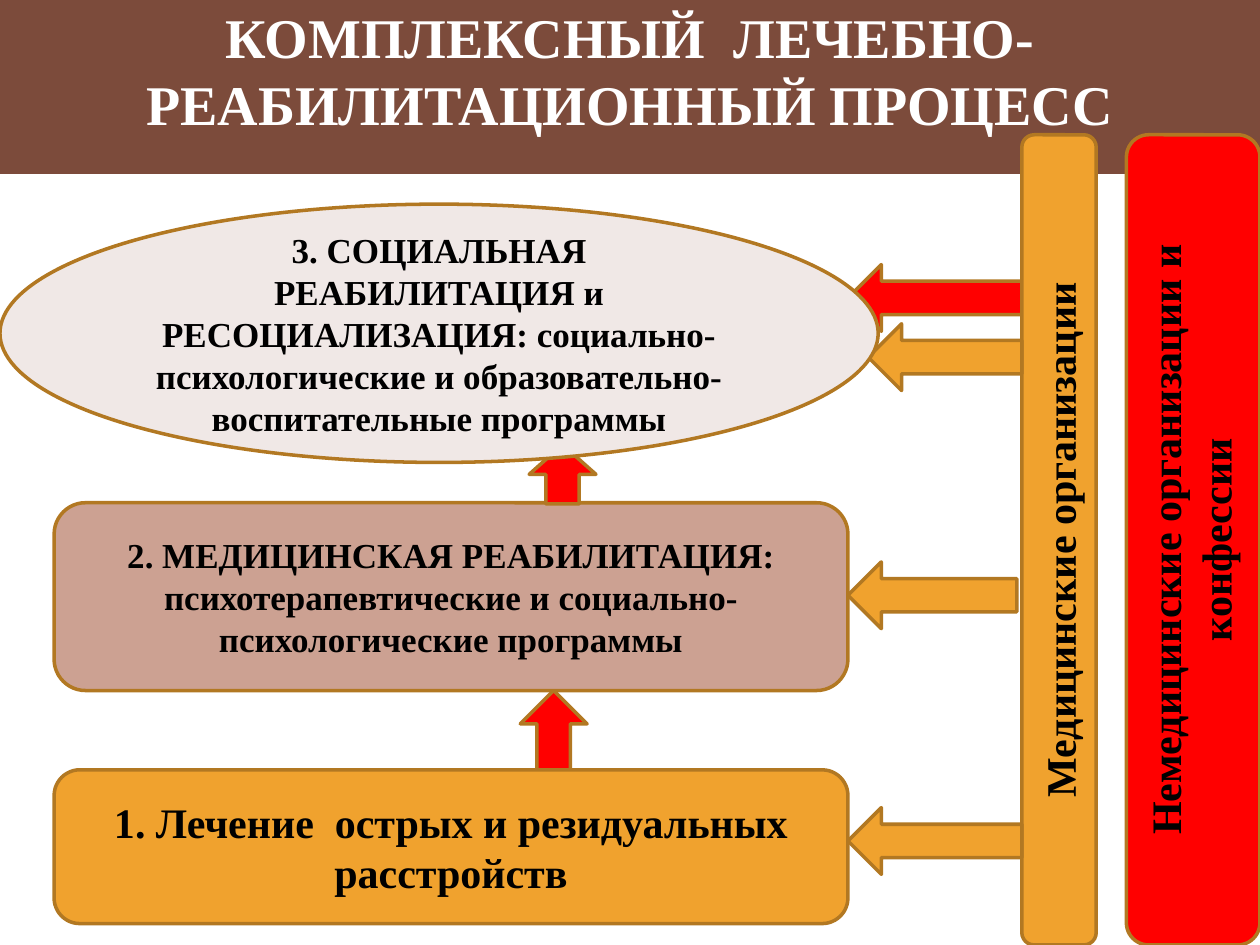
from pptx import Presentation
from pptx.dml.color import RGBColor
from pptx.enum.shapes import MSO_SHAPE
from pptx.enum.text import MSO_ANCHOR, PP_ALIGN
from pptx.util import Inches, Pt

COLORS = {
    "brown": "7C4B3B",
    "red": "FF0000",
    "orange": "F0A22E",
    "rose": "CCA192",
    "pale": "F0E8E6",
    "outline": "B27822",
    "black": "000000",
    "white": "FFFFFF",
}

deck = Presentation()
deck.slide_width = Inches(10)
deck.slide_height = Inches(7.5)
page = deck.slides.add_slide(deck.slide_layouts[6])

COLUMN = deck.slide_width / 100
ROW = deck.slide_height / 75


def add_block(kind, left, top, width, height, fill, outline="outline"):
    block = page.shapes.add_shape(
        kind, round(left * COLUMN), round(top * ROW), round(width * COLUMN), round(height * ROW)
    )
    block.shadow.inherit = False
    block.fill.solid()
    block.fill.fore_color.rgb = RGBColor.from_string(COLORS[fill])
    if outline:
        block.line.color.rgb = RGBColor.from_string(COLORS[outline])
        block.line.width = Pt(2)
    else:
        block.line.fill.background()
    return block


def write(block, text, size, color="black", anchor=MSO_ANCHOR.MIDDLE, upward=False):
    frame = block.text_frame
    frame.text = text
    frame.word_wrap = True
    frame.vertical_anchor = anchor
    if upward:
        frame._txBody.bodyPr.set("vert", "vert270")
    para = frame.paragraphs[0]
    para.alignment = PP_ALIGN.CENTER
    span = para.runs[0]
    span.font.name = "Times New Roman"
    span.font.size = Pt(size)
    span.font.bold = True
    span.font.color.rgb = RGBColor.from_string(COLORS[color])


STAGE_LEFT, STAGE_WIDTH = 4.3, 63
STAGE_RIGHT = STAGE_LEFT + STAGE_WIDTH
PILLAR_LEFT, PILLAR_TOP, PILLAR_HEIGHT = 81.1, 10.7, 64.3
ARROW_SIZE = 5.3

title = add_block(MSO_SHAPE.RECTANGLE, 0, -2.7, 100, 16.5, "brown", outline=None)
write(title, "КОМПЛЕКСНЫЙ  ЛЕЧЕБНО-РЕАБИЛИТАЦИОННЫЙ ПРОЦЕСС", 32, "white")

nonmedical = add_block(MSO_SHAPE.ROUNDED_RECTANGLE, 89.4, PILLAR_TOP, 10.6, PILLAR_HEIGHT, "red")
write(nonmedical, "Немедицинские организации и конфессии", 24, anchor=MSO_ANCHOR.TOP, upward=True)

add_block(MSO_SHAPE.LEFT_ARROW, STAGE_RIGHT, 21, 16.5, ARROW_SIZE, "red")

rehabilitation = add_block(MSO_SHAPE.ROUNDED_RECTANGLE, STAGE_LEFT, 39.9, STAGE_WIDTH, 14.9, "rose")
write(
    rehabilitation,
    "2. МЕДИЦИНСКАЯ РЕАБИЛИТАЦИЯ: психотерапевтические и социально-психологические программы",
    20,
)

medical = add_block(MSO_SHAPE.ROUNDED_RECTANGLE, PILLAR_LEFT, PILLAR_TOP, 5.9, PILLAR_HEIGHT, "orange")
write(medical, "Медицинские организации", 24, upward=True)

for tip, top, tail in [
    (68.9, 25.7, PILLAR_LEFT),
    (STAGE_RIGHT, 64.1, PILLAR_LEFT),
    (STAGE_RIGHT, 44.6, 80.7),
]:
    add_block(MSO_SHAPE.LEFT_ARROW, tip, top, tail - tip, ARROW_SIZE, "orange")

for left, top, height in [(42, 35.3, 4.7), (41.3, 54.8, 6.5)]:
    add_block(MSO_SHAPE.UP_ARROW, left, top, ARROW_SIZE, height, "red")

social = add_block(MSO_SHAPE.OVAL, 0, 16.2, 69.7, 20.5, "pale")
write(
    social,
    "3. СОЦИАЛЬНАЯ РЕАБИЛИТАЦИЯ и РЕСОЦИАЛИЗАЦИЯ: "
    "социально-психологические и образовательно-воспитательные программы",
    20,
)

treatment = add_block(MSO_SHAPE.ROUNDED_RECTANGLE, STAGE_LEFT, 61.1, STAGE_WIDTH, 12.2, "orange")
write(treatment, "1. Лечение  острых и резидуальных расстройств", 24)

deck.save("out.pptx")
